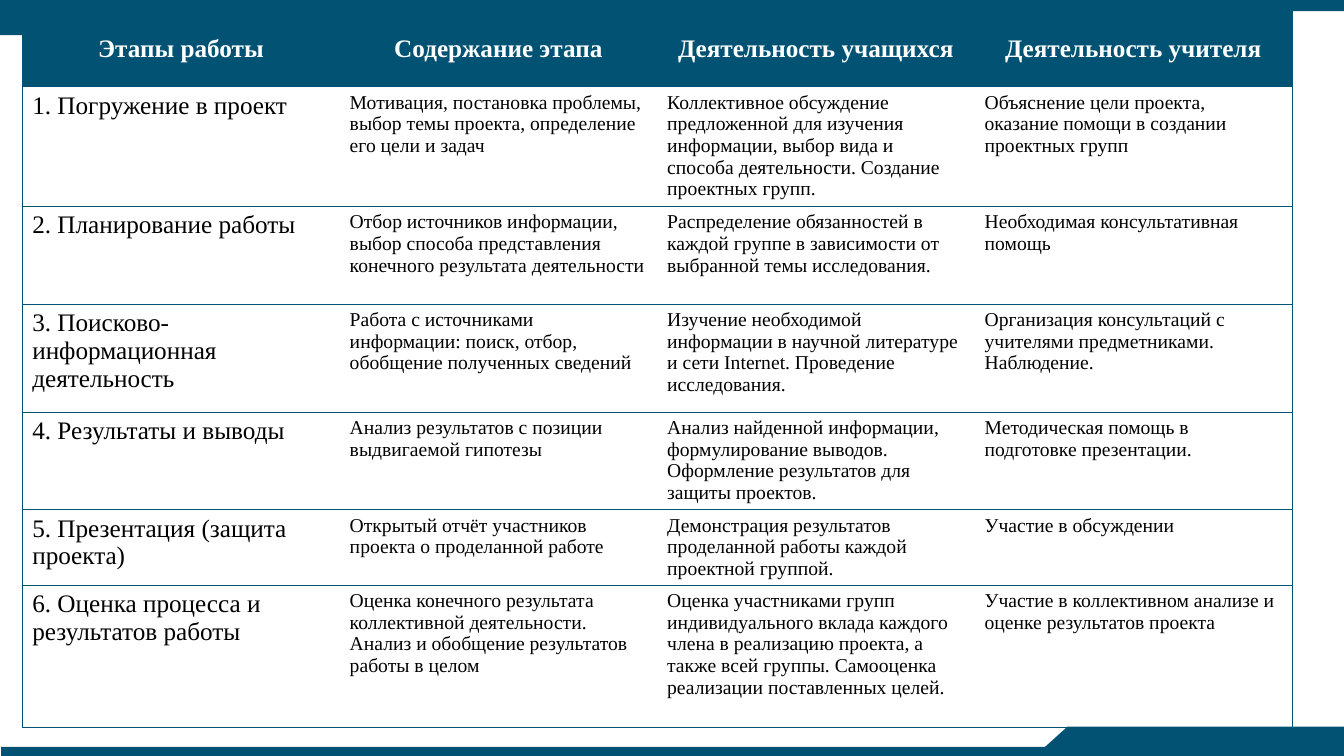
from dataclasses import dataclass

from lxml.etree import SubElement
from pptx import Presentation
from pptx.dml.color import RGBColor
from pptx.enum.shapes import MSO_SHAPE
from pptx.enum.text import MSO_ANCHOR, PP_ALIGN
from pptx.oxml.ns import qn
from pptx.util import Cm, Pt


@dataclass(frozen=True)
class Theme:
    accent: str = "025373"
    light: str = "FFFFFF"
    dark: str = "000000"
    font: str = "Times New Roman"
    large: int = 18
    small: int = 14
    border: float = 0.5


THEME = Theme()

COLUMN_WIDTH = 8
ROW_HEIGHTS = [1.9, 3.02, 2.46, 2.72, 2.46, 1.9, 3.58]
STAGES = [
    ["Этапы работы", "Содержание этапа", "Деятельность учащихся", "Деятельность учителя"],
    ["1. Погружение в проект",
     "Мотивация, постановка проблемы, выбор темы проекта, определение его цели и задач",
     "Коллективное обсуждение предложенной для изучения информации, выбор вида и способа "
     "деятельности. Создание проектных групп.",
     "Объяснение цели проекта, оказание помощи в создании проектных групп"],
    ["2. Планирование работы",
     "Отбор источников информации, выбор способа представления конечного результата деятельности",
     "Распределение обязанностей в каждой группе в зависимости от выбранной темы исследования.",
     "Необходимая консультативная помощь"],
    ["3. Поисково-информационная деятельность",
     "Работа с источниками информации: поиск, отбор, обобщение полученных сведений",
     "Изучение необходимой информации в научной литературе и сети Internet. "
     "Проведение исследования.",
     "Организация консультаций с учителями предметниками. Наблюдение."],
    ["4. Результаты и выводы",
     "Анализ результатов с позиции выдвигаемой гипотезы",
     "Анализ найденной информации, формулирование выводов. "
     "Оформление результатов для защиты проектов.",
     "Методическая помощь в подготовке презентации."],
    ["5. Презентация (защита проекта)",
     "Открытый отчёт участников проекта о проделанной работе",
     "Демонстрация результатов проделанной работы каждой проектной группой.",
     "Участие в обсуждении"],
    ["6. Оценка процесса и результатов работы",
     "Оценка конечного результата коллективной деятельности. "
     "Анализ и обобщение результатов работы в целом",
     "Оценка участниками групп индивидуального вклада каждого члена в реализацию проекта, "
     "а также всей группы. Самооценка реализации поставленных целей.",
     "Участие в коллективном анализе и оценке результатов проекта"],
]


def add_band(page, left, top, width, height, kind=MSO_SHAPE.RECTANGLE, rotation=0):
    band = page.shapes.add_shape(kind, Cm(left), Cm(top), Cm(width), Cm(height))
    band.rotation = rotation
    band.shadow.inherit = False
    band.fill.solid()
    band.fill.fore_color.rgb = RGBColor.from_string(THEME.accent)
    band.line.fill.background()


def add_tab(page, left, slant_left, top, rotation=0):
    """A wide block whose inner end is slanted by a triangle."""
    add_band(page, left, top, 7.06, 0.76)
    add_band(page, slant_left, top, 1.68, 0.76, MSO_SHAPE.FLOWCHART_MERGE, rotation)


def write_text(frame, text, size, color, bold=False, align=PP_ALIGN.LEFT):
    para = frame.paragraphs[0]
    para.alignment = align
    span = para.add_run()
    span.text = text
    span.font.name = THEME.font
    span.font.size = Pt(size)
    span.font.bold = bold
    span.font.color.rgb = RGBColor.from_string(color)


def set_borders(cell, visible):
    """Draw the sides named in visible (L, R, T, B) and hide the others."""
    properties = cell._tc.get_or_add_tcPr()
    for side in "LRTB":
        line = SubElement(properties, qn(f"a:ln{side}"), w=str(Pt(THEME.border)))
        if side in visible:
            fill = SubElement(line, qn("a:solidFill"))
            SubElement(fill, qn("a:srgbClr"), val=THEME.accent)
        else:
            SubElement(line, qn("a:noFill"))


def fill_cell(cell, text, row, column, last_column):
    sides = "TB" + ("L" if column == 0 else "") + ("R" if column == last_column else "")
    set_borders(cell, sides)
    if row == 0:
        cell.fill.solid()
        cell.fill.fore_color.rgb = RGBColor.from_string(THEME.accent)
        cell.vertical_anchor = MSO_ANCHOR.MIDDLE
        write_text(cell.text_frame, text, THEME.large, THEME.light,
                   bold=True, align=PP_ALIGN.CENTER)
    else:
        cell.fill.background()
        size = THEME.large if column == 0 else THEME.small
        write_text(cell.text_frame, text, size, THEME.dark)


def add_stage_table(page, left, top):
    columns = len(STAGES[0])
    table = page.shapes.add_table(
        len(STAGES), columns, Cm(left), Cm(top),
        Cm(COLUMN_WIDTH * columns), Cm(sum(ROW_HEIGHTS))).table
    table.first_row = True
    table.horz_banding = False
    for column in table.columns:
        column.width = Cm(COLUMN_WIDTH)
    for row, (height, texts) in enumerate(zip(ROW_HEIGHTS, STAGES)):
        table.rows[row].height = Cm(height)
        for column, text in enumerate(texts):
            fill_cell(table.cell(row, column), text, row, column, columns - 1)


def main():
    deck = Presentation()
    deck.slide_width, deck.slide_height = Cm(33.87), Cm(19.05)
    page = deck.slides.add_slide(deck.slide_layouts[6])

    # Bands along the top and bottom edges
    add_band(page, 0, 0, 33.87, 0.28)
    add_band(page, 0.03, 18.82, 33.87, 0.28)

    # Slanted tabs in opposite corners
    add_tab(page, 0, 6.22, 0.13)
    add_tab(page, 26.9, 26.06, 18.31, rotation=180)

    # Project stages
    add_stage_table(page, 0.56, 0.28)

    deck.save("out.pptx")


if __name__ == "__main__":
    main()
